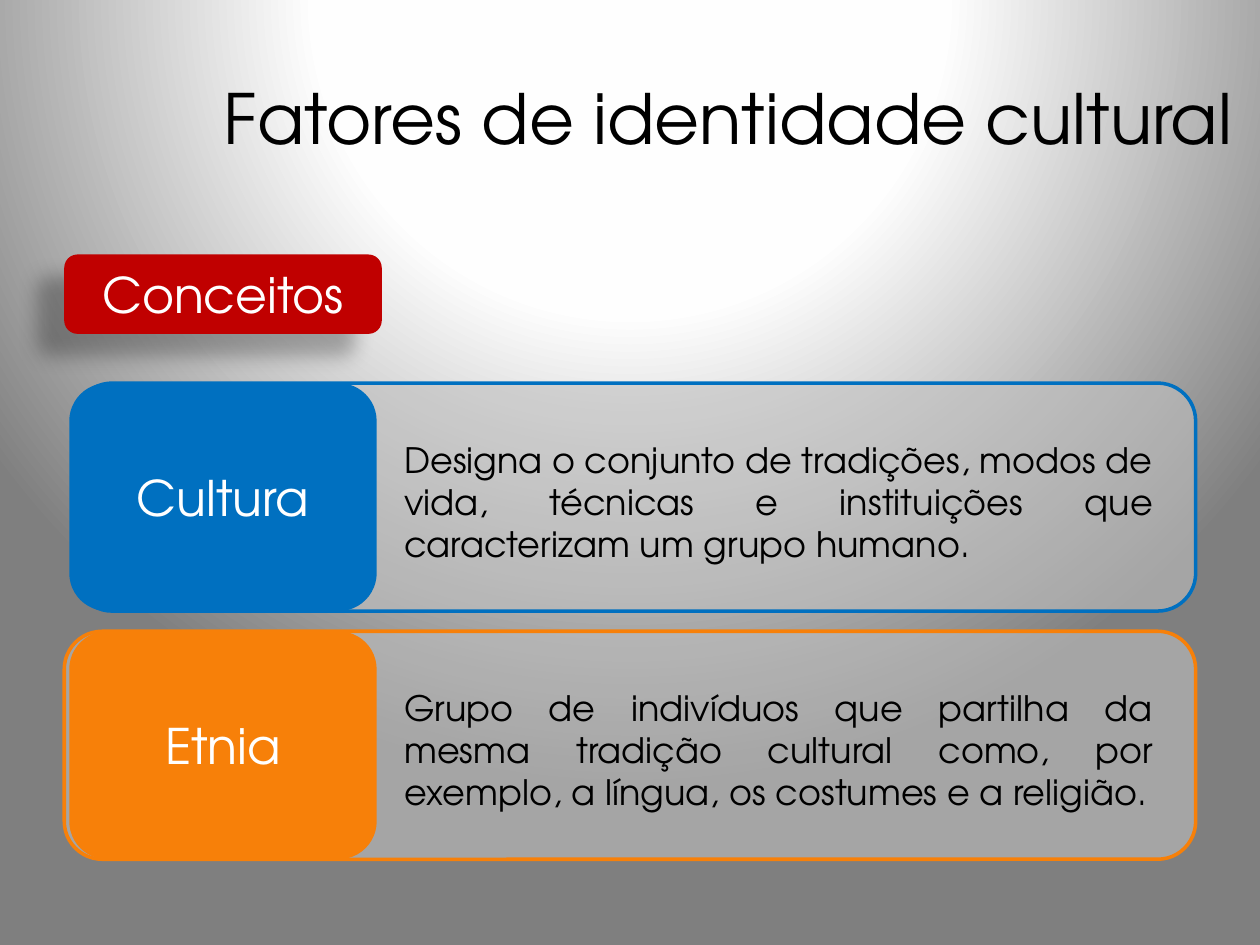
from lxml import etree
from pptx import Presentation
from pptx.dml.color import RGBColor
from pptx.enum import shapes, text
from pptx.oxml import parse_xml
from pptx.oxml.ns import nsdecls, qn
from pptx.util import Inches, Pt

FONT = "TeX Gyre Adventor"
BLACK, WHITE, GREY = "000000", "FFFFFF", "BFBFBF"
RED, BLUE, ORANGE = "C00000", "0070C0", "F78009"
ALIGN = text.PP_ALIGN


def rgb(value):
    return RGBColor.from_string(value)


class Deck:
    """Style and current slide, with a method for each kind of element."""

    def __init__(self, width, height):
        self.prs = Presentation()
        self.prs.slide_width, self.prs.slide_height = Inches(width), Inches(height)
        self.s = self.prs.slides.add_slide(self.prs.slide_layouts[5])

    def background(self, stops):
        gs = "".join(f'<a:gs pos="{pos * 1000}"><a:srgbClr val="{color}"/></a:gs>'
                     for pos, color in stops)
        self.s.element.cSld.insert(0, parse_xml(
            f'<p:bg {nsdecls("p", "a")}><p:bgPr><a:gradFill rotWithShape="1">'
            f'<a:gsLst>{gs}</a:gsLst><a:path path="circle">'
            '<a:fillToRect l="50000" t="-80000" r="50000" b="180000"/></a:path>'
            '</a:gradFill><a:effectLst/></p:bgPr></p:bg>'))

    def set_text(self, sp, words, size, color, align):
        tf = sp.text_frame
        tf.word_wrap = True
        p = tf.paragraphs[0]
        p.text, p.alignment = words, align
        p.font.name, p.font.size = FONT, Pt(size)
        p.font.color.rgb = rgb(color)
        return tf

    def title(self, words, box):
        sp = self.s.shapes.title
        sp.left, sp.top, sp.width, sp.height = map(Inches, box)
        tf = self.set_text(sp, words, 39.6, BLACK, ALIGN.RIGHT)
        tf.auto_size = text.MSO_AUTO_SIZE.NONE
        tf.vertical_anchor = text.MSO_ANCHOR.MIDDLE

    def rounded(self, box, fill, line=None):
        sp = self.s.shapes.add_shape(
            shapes.MSO_SHAPE.ROUNDED_RECTANGLE, *map(Inches, box))
        sp.shadow.inherit = False
        sp.fill.solid()
        sp.fill.fore_color.rgb = rgb(fill)
        if line:
            sp.line.color.rgb = rgb(line)
            sp.line.width = Pt(2)
        else:
            sp.line.fill.background()
        return sp

    def label(self, words, box, fill):
        sp = self.rounded(box, fill)
        tf = self.set_text(sp, words, 28, WHITE, ALIGN.CENTER)
        tf.vertical_anchor = text.MSO_ANCHOR.MIDDLE
        return sp

    def panel(self, box, line):
        sp = self.rounded(box, GREY, line)
        color = sp.element.spPr.find(qn("a:solidFill"))[0]
        etree.SubElement(color, qn("a:alpha"), val="60000")

    def body(self, words, box):
        sp = self.s.shapes.add_textbox(*map(Inches, box))
        tf = self.set_text(sp, words, 20, BLACK, ALIGN.JUSTIFY)
        tf.auto_size = text.MSO_AUTO_SIZE.SHAPE_TO_FIT_TEXT

    def cast_shadow(self, sp):
        effects = sp.element.spPr.find(qn("a:effectLst"))
        effects.append(parse_xml(
            f'<a:outerShdw {nsdecls("a")} blurRad="{Pt(11.8)}" dist="{Pt(19.7)}" '
            f'dir="{141 * 60000}" algn="ctr" rotWithShape="0"><a:srgbClr val="{BLACK}">'
            '<a:alpha val="28000"/></a:srgbClr></a:outerShdw>'))


def main():
    deck = Deck(10, 7.5)
    deck.background([(0, WHITE), (40, "FEFEFE"), (100, "7F7F7F")])
    deck.title("Fatores de identidade cultural", (0.88, 0.3, 9, 1.25))

    # Section heading
    deck.cast_shadow(deck.label("Conceitos", (0.51, 2.02, 2.52, 0.63), RED))

    # Concepts: name, definition, colour, panel left, panel top, text top
    concepts = [
        ("Cultura", "Designa o conjunto de tradições, modos de vida, técnicas e "
         "instituições que caracterizam um grupo humano.", BLUE, 0.59, 3.04, 3.43),
        ("Etnia", "Grupo de indivíduos que partilha da mesma tradição cultural como, "
         "por exemplo, a língua, os costumes e a religião.", ORANGE, 0.51, 5.01, 5.4),
    ]
    right, height = 9.49, 1.81
    for name, definition, color, left, top, text_top in concepts:
        deck.panel((left, top, right - left, height), color)
        deck.label(name, (0.55, top, 2.44, height), color)
        deck.body(definition, (3.11, text_top, 6.14, 1.11))

    deck.prs.save("out.pptx")


if __name__ == "__main__":
    main()
